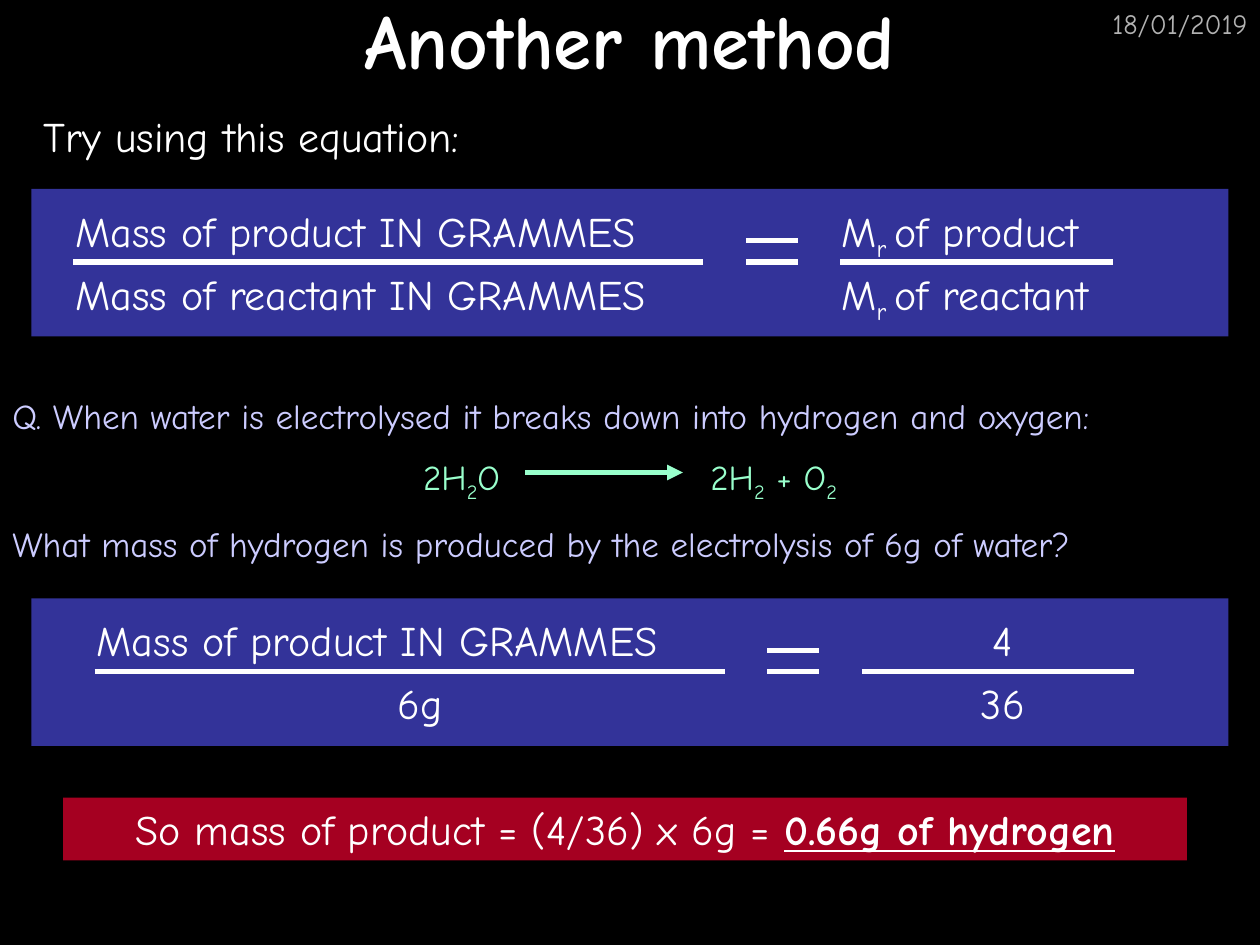
from lxml import etree
from pptx import Presentation
from pptx.dml.color import RGBColor
from pptx.enum.shapes import MSO_CONNECTOR, MSO_SHAPE
from pptx.enum.text import MSO_ANCHOR, PP_ALIGN
from pptx.oxml.ns import qn
from pptx.util import Inches, Pt

LEFT, CENTER, RIGHT = PP_ALIGN.LEFT, PP_ALIGN.CENTER, PP_ALIGN.RIGHT
MIDDLE, TOP = MSO_ANCHOR.MIDDLE, MSO_ANCHOR.TOP
RECTANGLE, STRAIGHT = MSO_SHAPE.RECTANGLE, MSO_CONNECTOR.STRAIGHT
FONT = "Comic Neue"
WHITE, BLACK, GREY = "FFFFFF", "000000", "B2B2B2"
BLUE, RED, LILAC, MINT = "333399", "A50021", "CCCCFF", "99FFCC"
PRODUCT_MASS = "Mass of product IN GRAMMES"


def color(hex_string):
    """Return the colour for a hex string."""
    return RGBColor.from_string(hex_string)


def write(paragraph, runs, size=24, fill=WHITE, align=LEFT, bold=None):
    """Fill a paragraph with plain text or (text, style) runs."""
    paragraph.alignment = align
    font = paragraph.font
    font.name, font.size, font.bold = FONT, Pt(size), bold
    font.color.rgb = color(fill)
    for text, style in [(runs, "")] if isinstance(runs, str) else runs:
        run = paragraph.add_run()
        run.text = text
        if style == "sub":
            run.font._element.set("baseline", "-25000")
        elif style == "strong":
            run.font.bold = run.font.underline = True


def add_text(slide, left, top, width, height, runs, anchor=TOP, **style):
    """Add a wrapping text box and return its text frame."""
    box = slide.shapes.add_textbox(Inches(left), Inches(top), Inches(width), Inches(height))
    frame = box.text_frame
    frame.word_wrap = True
    frame.vertical_anchor = anchor
    write(frame.paragraphs[0], runs, **style)
    return frame


def add_panel(slide, left, top, width, height, fill):
    """Add a borderless filled rectangle."""
    panel = slide.shapes.add_shape(
        RECTANGLE, Inches(left), Inches(top), Inches(width), Inches(height))
    panel.shadow.inherit = False
    panel.fill.solid()
    panel.fill.fore_color.rgb = color(fill)
    panel.line.fill.background()
    return panel


def add_line(slide, left, right, y, fill=WHITE, arrow=False):
    """Add a horizontal line, with an arrowhead if asked."""
    line = slide.shapes.add_connector(STRAIGHT, Inches(left), Inches(y), Inches(right), Inches(y))
    line.line.color.rgb = color(fill)
    line.line.width = Pt(3)
    if arrow:
        etree.SubElement(line.line._get_or_add_ln(), qn("a:tailEnd"), type="triangle")
    etree.SubElement(line._element.spPr, qn("a:effectLst"))


def add_equation(slide, top, shift, left_fraction, right_fraction, aligns):
    """Add a blue panel with two fractions either side of an equals sign."""
    add_panel(slide, 0.25, top, 9.5, 1.17, BLUE)
    bar = top + 0.58
    for start, end, y in [(0.58, 5.58, bar), (6.67, 8.83, bar),
                          (5.92, 6.33, bar - 0.17), (5.92, 6.33, bar)]:
        add_line(slide, start + shift, end + shift, y)
    columns = [(0.5, 5.33, left_fraction), (6.58, 2.42, right_fraction)]
    for (left, width, fraction), column_aligns in zip(columns, aligns):
        for row, (term, align) in enumerate(zip(fraction, column_aligns)):
            add_text(slide, left + shift, bar - 0.5 + row * 0.5, width, 0.5, term, align=align)


def add_tabs(paragraph, positions):
    """Set left tab stops on a paragraph."""
    tabs = etree.SubElement(paragraph._p.get_or_add_pPr(), qn("a:tabLst"))
    for position in positions:
        etree.SubElement(tabs, qn("a:tab"), pos=str(Inches(position)), algn="l")
    paragraph._p.pPr.insert_element_before(tabs, "a:defRPr", "a:extLst")


def add_question(slide):
    """Add the question with its chemical equation."""
    frame = add_text(
        slide, 0, 3.08, 10, 1.43,
        "Q. When water is electrolysed it breaks down into hydrogen and oxygen:",
        size=20, fill=LILAC)
    reaction = [("\t2H", ""), ("2", "sub"), ("O\t2H", ""), ("2", "sub"),
                (" + O", ""), ("2", "sub")]
    follow_up = "What mass of hydrogen is produced by the electrolysis of 6g of water?"
    for runs, fill in [(reaction, MINT), (follow_up, LILAC)]:
        paragraph = frame.add_paragraph()
        paragraph.space_before = Pt(11)
        write(paragraph, runs, size=20, fill=fill)
    add_tabs(frame.paragraphs[1], [3.26, 5.54])
    add_line(slide, 4.17, 5.42, 3.75, MINT, arrow=True)


def add_answer(slide):
    """Add the red panel with the result."""
    panel = add_panel(slide, 0.5, 6.33, 8.92, 0.5, RED)
    panel.text_frame.vertical_anchor = TOP
    write(panel.text_frame.paragraphs[0],
          [("So mass of product = (4/36) x 6g = ", ""), ("0.66g of hydrogen", "strong")],
          align=CENTER)


def main():
    """Build and save the slide."""
    presentation = Presentation()
    presentation.slide_width, presentation.slide_height = Inches(10), Inches(7.5)
    slide = presentation.slides.add_slide(presentation.slide_layouts[6])
    slide.background.fill.solid()
    slide.background.fill.fore_color.rgb = color(BLACK)

    add_text(slide, 7.92, 0, 2.08, 0.5, "18/01/2019", size=16, fill=GREY, align=RIGHT)
    add_text(slide, 0, 0, 10, 0.61, "Another method", anchor=MIDDLE,
             size=44, align=CENTER, bold=True)
    add_text(slide, 0.25, 0.83, 9.5, 0.5, "Try using this equation:")
    relative_masses = [[("M", ""), ("r ", "sub"), (f"of {name}", "")]
                       for name in ("product", "reactant")]
    add_equation(slide, 1.5, 0, [PRODUCT_MASS, "Mass of reactant IN GRAMMES"],
                 relative_masses, [(LEFT, LEFT), (LEFT, LEFT)])
    add_question(slide)
    add_equation(slide, 4.75, 0.17, [PRODUCT_MASS, "6g"], ["4", "36"],
                 [(LEFT, CENTER), (CENTER, CENTER)])
    add_answer(slide)
    presentation.save("out.pptx")


if __name__ == "__main__":
    main()
